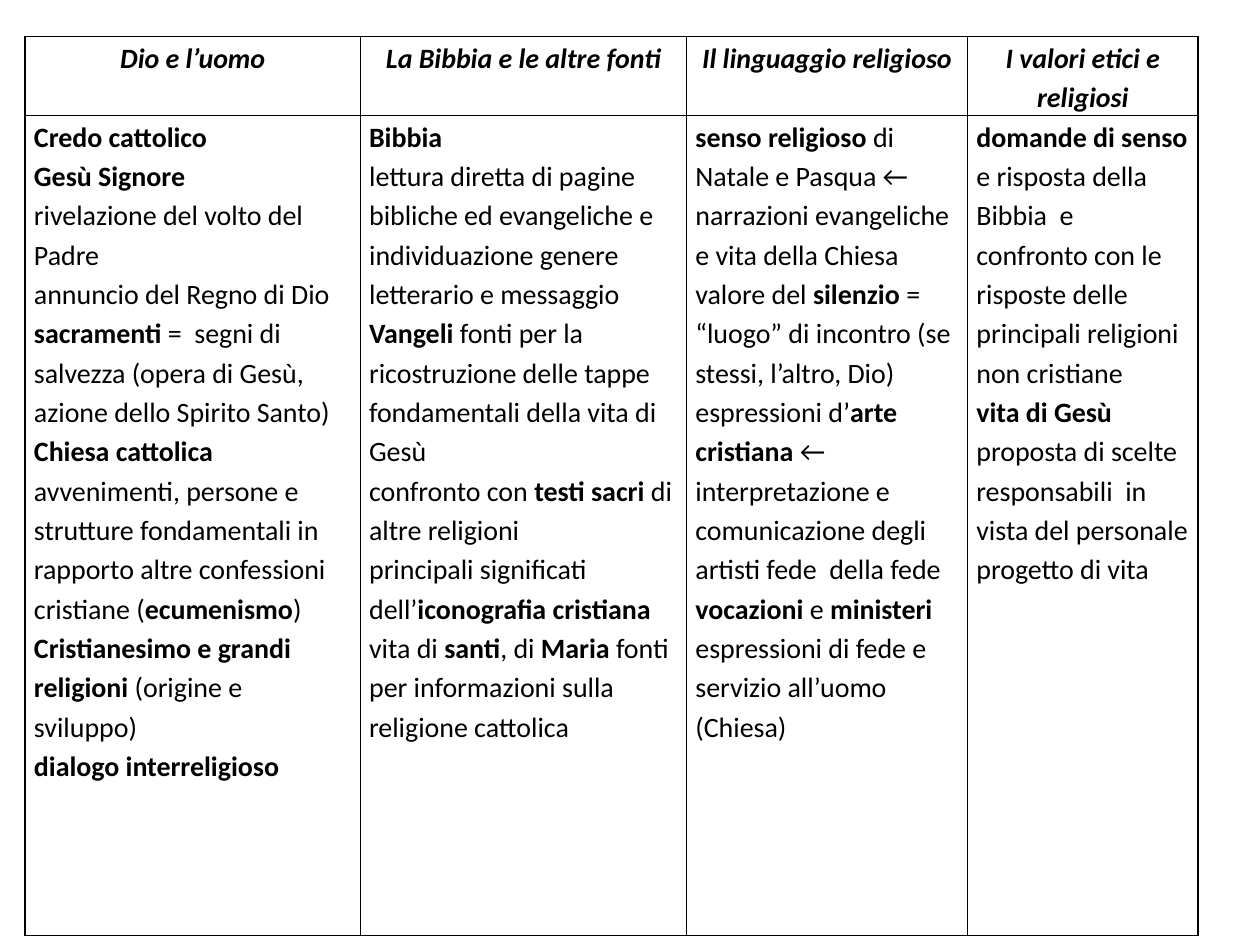
from lxml import etree
from pptx import Presentation
from pptx import util as u
from pptx.dml.color import RGBColor
from pptx.enum import text
from pptx.oxml import ns

COLORS = {"ink": "000000", "border": "000000"}
FONT, SIZE, LINE_SPACING = "Calibri", 16, 1.15
COLUMN_WIDTHS = [2.66, 2.59, 2.23, 1.83]
ROW_HEIGHTS = [0.5, 6.51]
TABLE_BOX = (0.2, 0.29, sum(COLUMN_WIDTHS), sum(ROW_HEIGHTS))

# Asterisks enclose the bold words of a paragraph.
TOPICS = {
    "Dio e l’uomo": [
        "*Credo cattolico*",
        "*Gesù Signore*",
        "rivelazione del volto del Padre",
        "annuncio del Regno di Dio",
        "*sacramenti *=  segni di salvezza (opera di Gesù, azione dello Spirito Santo)",
        "*Chiesa cattolica*",
        "avvenimenti, persone e strutture fondamentali in rapporto altre "
        "confessioni cristiane (*ecumenismo*)",
        "*Cristianesimo e grandi religioni* (origine e sviluppo)",
        "*dialogo interreligioso*",
    ],
    "La Bibbia e le altre fonti": [
        "*Bibbia*",
        "lettura diretta di pagine bibliche ed evangeliche e individuazione "
        "genere letterario e messaggio",
        "*Vangeli *fonti per la ricostruzione delle tappe fondamentali della vita di Gesù",
        "confronto con *testi sacri* di altre religioni",
        "principali significati dell’*iconografia cristiana*",
        "vita di *santi*, di *Maria* fonti per informazioni sulla religione cattolica",
    ],
    "Il linguaggio religioso": [
        "*senso religioso* di Natale e Pasqua ← narrazioni evangeliche e vita della Chiesa",
        "valore del *silenzio* = “luogo” di incontro (se stessi, l’altro, Dio)",
        "espressioni d’*arte cristiana *← interpretazione e comunicazione "
        "degli artisti fede  della fede",
        "*vocazioni* e *ministeri *espressioni di fede e servizio all’uomo (Chiesa)",
    ],
    "I valori etici e religiosi": [
        "*domande di senso* e risposta della Bibbia  e confronto con le risposte "
        "delle principali religioni non cristiane",
        "*vita di Gesù* proposta di scelte responsabili  in vista del personale "
        "progetto di vita",
    ],
}


def style_cell(cell):
    """Set narrow side margins, thin borders and no fill."""
    cell.margin_left = cell.margin_right = u.Inches(0.07)
    cell.margin_top = cell.margin_bottom = 0
    tc_pr = cell._tc.get_or_add_tcPr()
    for side in "LRTB":
        ln = etree.SubElement(tc_pr, ns.qn(f"a:ln{side}"), w=str(u.Pt(1)))
        fill = etree.SubElement(ln, ns.qn("a:solidFill"))
        etree.SubElement(fill, ns.qn("a:srgbClr"), val=COLORS["border"])
    cell.fill.background()


def write_cell(cell, lines, header=False):
    tf = cell.text_frame
    for i, line in enumerate(lines):
        p = tf.paragraphs[0] if i == 0 else tf.add_paragraph()
        p.alignment = text.PP_ALIGN.CENTER if header else text.PP_ALIGN.LEFT
        p.line_spacing = LINE_SPACING
        p.font.name, p.font.size = FONT, u.Pt(SIZE)
        p.font.italic = header
        p.font.color.rgb = RGBColor.from_string(COLORS["ink"])
        for j, part in enumerate(line.split("*")):
            if part:
                r = p.add_run()
                r.text = part
                r.font.name, r.font.size = FONT, u.Pt(SIZE)
                r.font.bold = header or j % 2 == 1
                r.font.italic = header


def add_topic_table(slide, box):
    """Give each topic one column: heading above, contents below."""
    left, top, width, height = box
    frame = slide.shapes.add_table(len(ROW_HEIGHTS), len(TOPICS),
                                   *(u.Inches(v) for v in box))
    table = frame.table
    table.first_row = table.horz_banding = False
    for row, share in zip(table.rows, ROW_HEIGHTS):
        row.height = u.Inches(height * share / sum(ROW_HEIGHTS))
    for col, share in zip(table.columns, COLUMN_WIDTHS):
        col.width = u.Inches(width * share / sum(COLUMN_WIDTHS))
    for cell in table.iter_cells():
        style_cell(cell)
    for c, (heading, lines) in enumerate(TOPICS.items()):
        write_cell(table.cell(0, c), [heading], header=True)
        write_cell(table.cell(1, c), lines)


def main():
    prs = Presentation()
    prs.slide_width, prs.slide_height = u.Inches(10), u.Inches(7.5)
    slide = prs.slides.add_slide(prs.slide_layouts[6])
    add_topic_table(slide, TABLE_BOX)
    prs.save("out.pptx")


if __name__ == "__main__":
    main()
